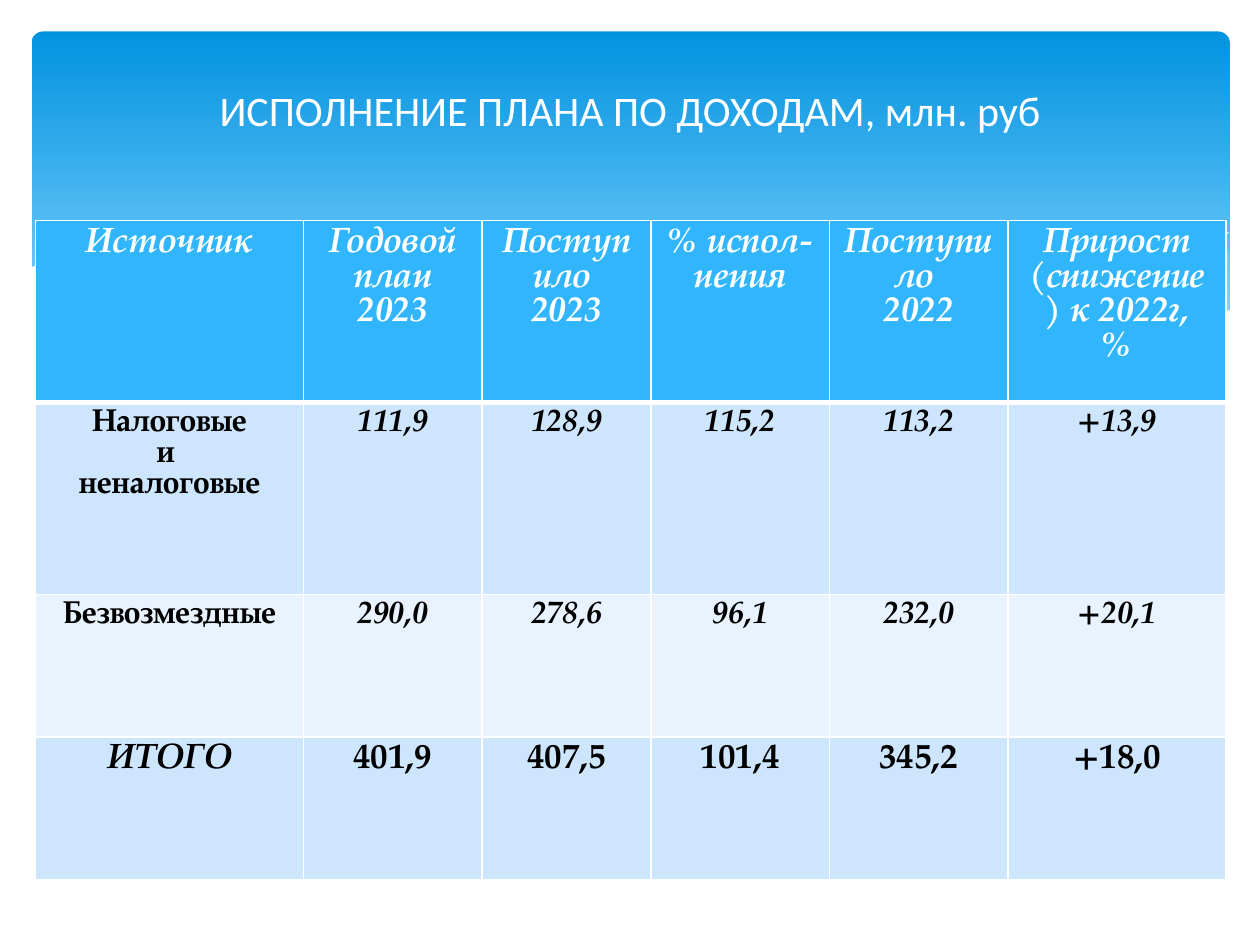
from dataclasses import dataclass
from typing import Optional

from lxml import etree
from pptx import Presentation
from pptx import util as u
from pptx.dml.color import RGBColor
from pptx.enum import shapes, text
from pptx.oxml import ns


@dataclass(frozen=True)
class Theme:
    white: str = "FFFFFF"
    ink: str = "000000"
    banner_top: str = "0293E0"
    banner_bottom: str = "83D3FE"
    wave: str = "C6E7FC"
    header: str = "31B6FD"
    odd_row: str = "CEE5FE"
    even_row: str = "E8F3FF"
    title_font: str = "Calibri"
    table_font: str = "TeX Gyre Pagella"
    title_size: float = 24
    large: float = 20
    body: float = 18


@dataclass(frozen=True)
class Wave:
    points: list
    fill: Optional[str] = None
    opacity: int = 100


@dataclass(frozen=True)
class Row:
    height: float
    fill: str
    color: str
    size: float
    source_italic: bool
    value_italic: bool
    bottom_border: float
    cells: list


THEME = Theme()

WAVES = [
    Wave([(702, 144), (652, 153), (620, 160.5), (561, 174), (508, 185),
          (476, 191), (527, 197), (570, 200), (609, 199), (646, 195),
          (683, 187), (702, 178)], THEME.wave, 29),
    Wave([(643, 196.5), (602, 191), (558, 183), (508, 173), (453, 160),
          (420, 152), (390, 146), (352, 140), (318, 136), (274, 133),
          (236, 135), (206, 137.5), (246, 143), (291, 152), (323, 160),
          (382, 173), (433, 184), (479, 192), (520, 197), (565, 200),
          (610, 199.5)], THEME.wave, 40),
    Wave([(222.5, 140.5), (261, 136), (300, 134.5), (352, 137), (400, 142),
          (458, 150), (523, 163), (572, 174), (626, 188), (653, 196)]),
    Wave([(441, 185), (500, 169), (559, 155.5), (624, 143), (665, 137),
          (702, 133)]),
    Wave([(703.5, 177), (670, 188.5), (630, 195.5), (582.5, 199.5),
          (536, 198), (481, 193), (434, 186), (381, 172), (322, 158.5),
          (263, 145), (210, 137), (152, 132.5), (105, 133), (68, 137.5),
          (42.5, 143), (26, 149), (16.5, 153.5), (16.5, 237),
          (703.5, 237)], THEME.white),
]

COLUMNS = [153.2, 102.1, 96.5, 102.1, 102.1, 124.4]

ROWS = [
    Row(104.2, THEME.header, THEME.white, THEME.large, True, True, 3,
        ["Источник", "Годовой\nплан 2023", "Поступило \n2023",
         "% испол-\nнения", "Поступило \n2022",
         "Прирост (снижение) к 2022г,\n%"]),
    Row(109.6, THEME.odd_row, THEME.ink, THEME.body, False, True, 1,
        ["Налоговые\nи \nненалоговые", "111,9", "128,9", "115,2", "113,2",
         "+13,9"]),
    Row(81.4, THEME.even_row, THEME.ink, THEME.body, False, True, 1,
        ["Безвозмездные", "290,0", "278,6", "96,1", "232,0", "+20,1"]),
    Row(81.4, THEME.odd_row, THEME.ink, THEME.large, True, False, 1,
        ["ИТОГО", "401,9", "407,5", "101,4", "345,2", "+18,0"]),
]


def rgb(color: str) -> RGBColor:
    return RGBColor.from_string(color)


def paint(fill, color: str) -> None:
    fill.solid()
    fill.fore_color.rgb = rgb(color)


def write(frame, content: str, color: str, formats: dict) -> None:
    frame.text = content
    for paragraph in frame.paragraphs:
        paragraph.alignment = text.PP_ALIGN.CENTER
        for run in paragraph.runs:
            run.font.color.rgb = rgb(color)
            for attribute, value in formats.items():
                setattr(run.font, attribute, value)


def draw_banner(slide) -> None:
    banner = slide.shapes.add_shape(
        shapes.MSO_SHAPE.ROUNDED_RECTANGLE,
        u.Pt(18), u.Pt(18), u.Pt(684.7), u.Pt(194.4))
    banner.adjustments[0] = 0.034
    banner.shadow.inherit = False
    banner.line.fill.background()
    banner.fill.gradient()
    banner.fill.gradient_angle = 270
    stops = [(0, THEME.banner_top), (0.9, THEME.banner_bottom)]
    for stop, (position, color) in zip(banner.fill.gradient_stops, stops):
        stop.position = position
        stop.color.rgb = rgb(color)


def draw_wave(slide, wave: Wave) -> None:
    (start_x, start_y), *rest = [(u.Pt(x), u.Pt(y)) for x, y in wave.points]
    builder = slide.shapes.build_freeform(start_x, start_y)
    builder.add_line_segments(rest, close=wave.fill is not None)
    outline = builder.convert_to_shape()
    outline.shadow.inherit = False
    if wave.fill is None:
        outline.fill.background()
        outline.line.color.rgb = rgb(THEME.white)
        outline.line.width = u.Pt(0)
        return
    paint(outline.fill, wave.fill)
    outline.line.fill.background()
    if wave.opacity < 100:
        color = outline.fill._xPr.find(".//" + ns.qn("a:srgbClr"))
        etree.SubElement(color, ns.qn("a:alpha"),
                         val=str(wave.opacity * 1000))


def draw_borders(cell, widths: dict) -> None:
    properties = cell._tc.get_or_add_tcPr()
    for index, (side, width) in enumerate(widths.items()):
        border = etree.Element(ns.qn(f"a:{side}"), w=str(u.Pt(width)))
        solid = etree.SubElement(border, ns.qn("a:solidFill"))
        etree.SubElement(solid, ns.qn("a:srgbClr"), val=THEME.white)
        properties.insert(index, border)


def draw_table(slide, rows: list[Row], columns: list[float]) -> None:
    table = slide.shapes.add_table(
        len(rows), len(columns), u.Pt(20.2), u.Pt(126),
        u.Pt(sum(columns)), u.Pt(sum(row.height for row in rows))).table
    for column, width in zip(table.columns, columns):
        column.width = u.Pt(width)
    top_border = 1
    for r, row in enumerate(rows):
        table.rows[r].height = u.Pt(row.height)
        for c, content in enumerate(row.cells):
            cell = table.cell(r, c)
            paint(cell.fill, row.fill)
            draw_borders(cell, {"lnL": 1, "lnR": 1, "lnT": top_border,
                                "lnB": row.bottom_border})
            italic = row.value_italic if c else row.source_italic
            write(cell.text_frame, content, row.color,
                  {"name": THEME.table_font, "size": u.Pt(row.size),
                   "bold": True, "italic": italic})
        top_border = row.bottom_border


def draw_title(slide, content: str) -> None:
    frame = slide.shapes.add_textbox(
        u.Pt(36), u.Pt(37.4), u.Pt(648), u.Pt(51.1)).text_frame
    frame.word_wrap = True
    frame.vertical_anchor = text.MSO_ANCHOR.MIDDLE
    write(frame, content, THEME.white,
          {"name": THEME.title_font, "size": u.Pt(THEME.title_size)})


def main() -> None:
    deck = Presentation()
    deck.slide_width, deck.slide_height = u.Pt(720), u.Pt(540)
    slide = deck.slides.add_slide(deck.slide_layouts[6])
    draw_banner(slide)
    for wave in WAVES:
        draw_wave(slide, wave)
    draw_table(slide, ROWS, COLUMNS)
    draw_title(slide, "ИСПОЛНЕНИЕ ПЛАНА ПО ДОХОДАМ, млн. руб")
    deck.save("out.pptx")


if __name__ == "__main__":
    main()
